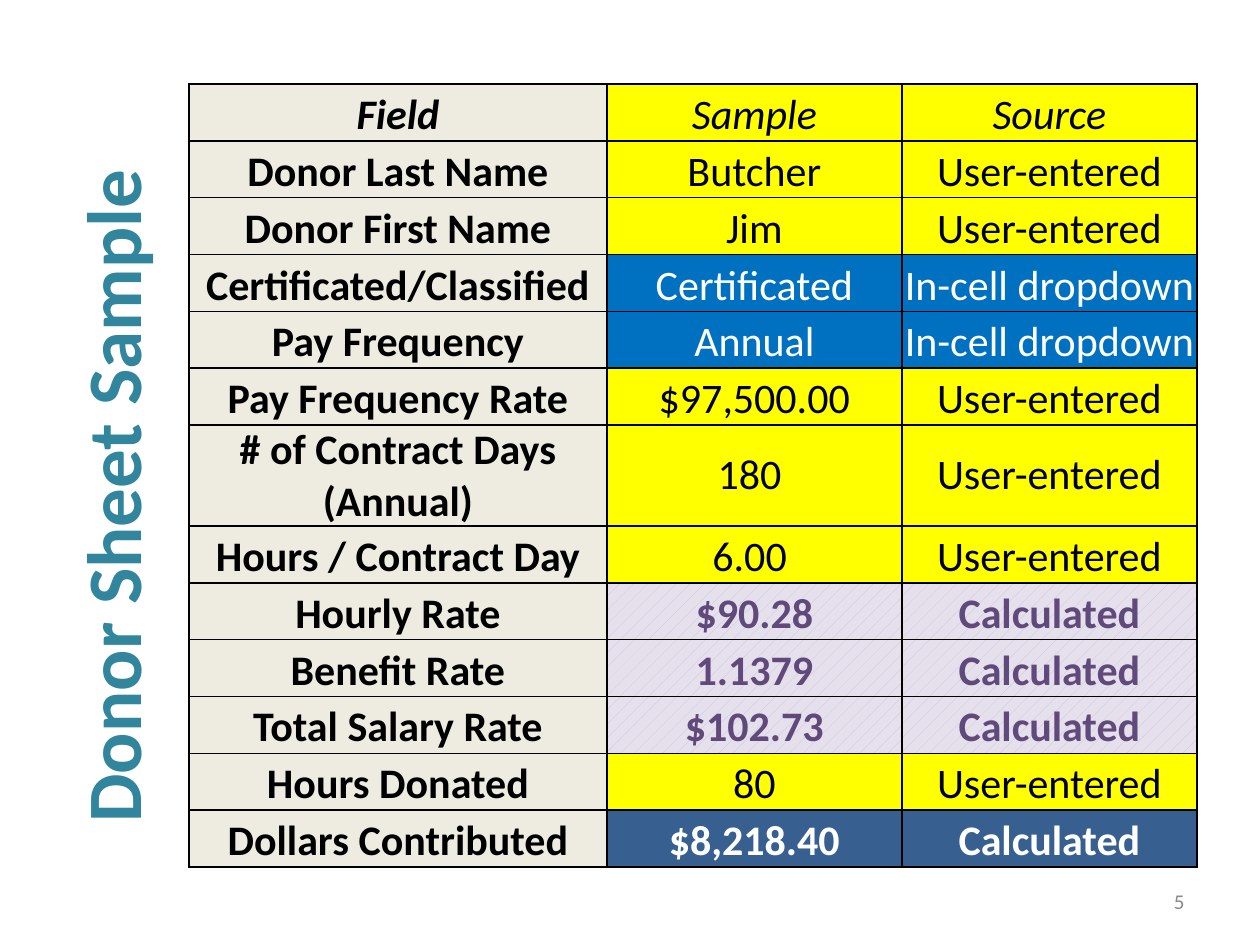
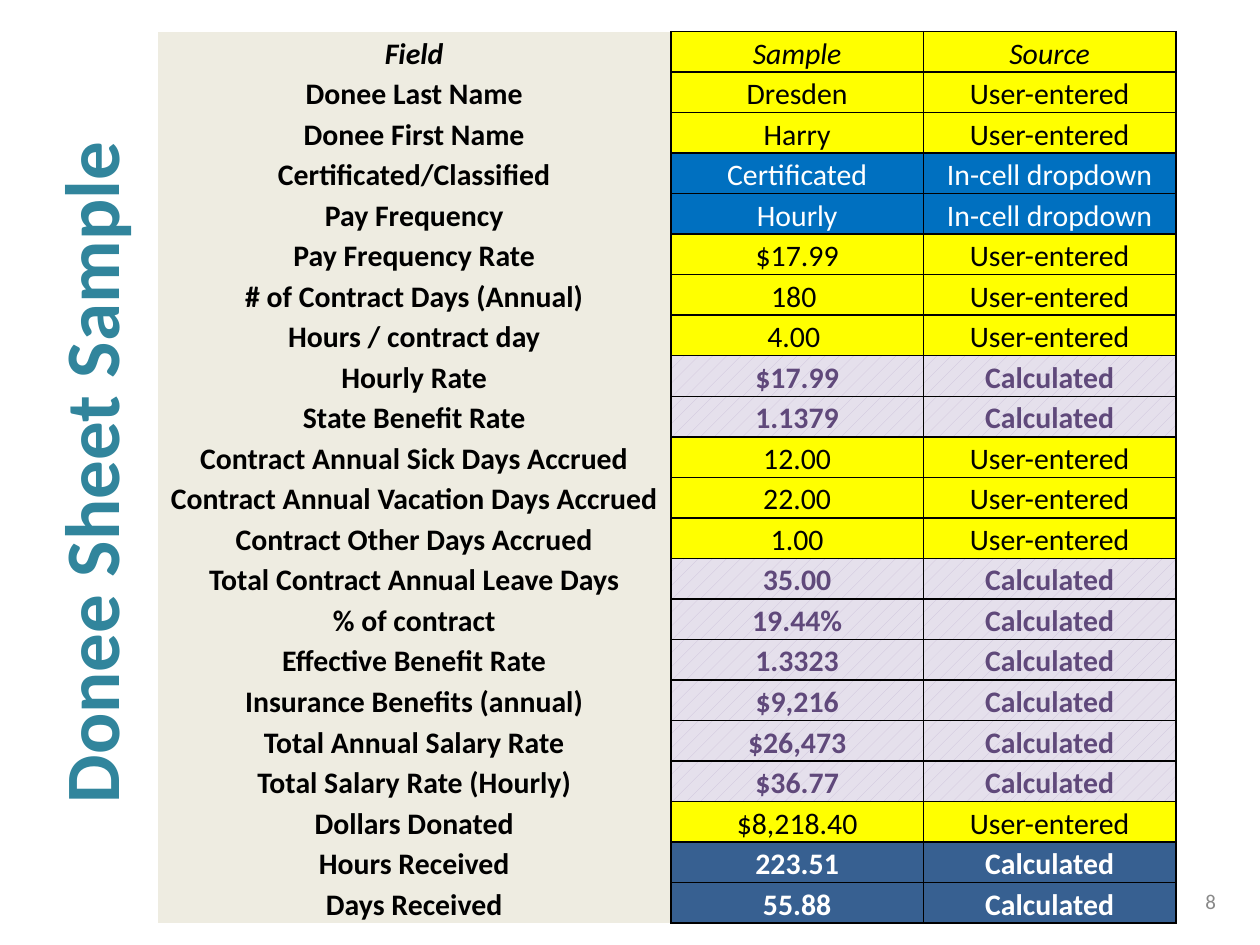
from dataclasses import dataclass

from lxml import etree
from pptx import Presentation
from pptx.dml.color import RGBColor
from pptx.enum.dml import MSO_PATTERN
from pptx.enum.text import MSO_ANCHOR, PP_ALIGN
from pptx.oxml.ns import qn
from pptx.util import Inches, Pt

CENTER, RIGHT = PP_ALIGN.CENTER, PP_ALIGN.RIGHT
MIDDLE, BOTTOM = MSO_ANCHOR.MIDDLE, MSO_ANCHOR.BOTTOM
DOTTED = MSO_PATTERN.PERCENT_10
BORDER_TAGS = ("a:lnL", "a:lnR", "a:lnT", "a:lnB")
ALL_SIDES = frozenset(BORDER_TAGS)
RIGHT_SIDE = frozenset(["a:lnR"])


@dataclass(frozen=True)
class Theme:
    """Fonts, sizes, colours and the grid cell shared by the slides."""

    font: str = "Calibri"
    title_size: float = 44
    number_size: float = 12
    border_width: float = 1
    title: str = "31859C"
    number: str = "898989"
    ink: str = "000000"
    white: str = "FFFFFF"
    field: str = "EEECE1"
    entered: str = "FFFF00"
    dropdown: str = "0070C0"
    calculated_ink: str = "60497B"
    calculated_dots: str = "CCC0DA"
    calculated: str = "E5E0EC"
    result: str = "376091"
    columns: int = 120
    rows: int = 90


THEME = Theme()


@dataclass(frozen=True)
class Box:
    """A region measured in grid columns and rows."""

    left: float
    top: float
    width: float
    height: float

    def turned(self):
        """Return the frame that covers this box after a quarter turn."""
        shift = (self.width - self.height) / 2
        return Box(self.left + shift, self.top - shift, self.height, self.width)

    def lengths(self):
        """Return left, top, width and height as slide lengths."""
        return (across(self.left), down(self.top), across(self.width), down(self.height))


@dataclass(frozen=True)
class Kind:
    """How a row's value is obtained, and how its cells look."""

    source: str
    fill: str
    color: str
    bold: bool = False
    italic: bool = False
    dots: str = ""


HEADING = Kind("Source", THEME.entered, THEME.ink, italic=True)
ENTERED = Kind("User-entered", THEME.entered, THEME.ink)
DROPDOWN = Kind("In-cell dropdown", THEME.dropdown, THEME.white)
CALCULATED = Kind("Calculated", THEME.calculated, THEME.calculated_ink, True,
                  dots=THEME.calculated_dots)
RESULT = Kind("Calculated", THEME.result, THEME.white, True)


@dataclass(frozen=True)
class Sheet:
    """The content and measures of one sample sheet slide."""

    title: str
    number: str
    title_box: Box
    table_box: Box
    number_box: Box
    field_columns: float
    text_size: float
    field_borders: frozenset
    records: tuple
    tall_record: str = ""
    tall_rows: float = 0


DONOR = Sheet(
    "Donor Sheet Sample", "5",
    Box(3, 6.25, 15, 82), Box(18, 8, 96, 74.5), Box(86, 83.4, 28, 4.8),
    39.8, 24, ALL_SIDES,
    (
        ("Field", "Sample", HEADING),
        ("Donor Last Name", "Butcher", ENTERED),
        ("Donor First Name", "Jim", ENTERED),
        ("Certificated/Classified", "Certificated", DROPDOWN),
        ("Pay Frequency", "Annual", DROPDOWN),
        ("Pay Frequency Rate", "$97,500.00", ENTERED),
        ("# of Contract Days (Annual)", "180 ", ENTERED),
        ("Hours / Contract Day", "6.00 ", ENTERED),
        ("Hourly Rate", "$90.28", CALCULATED),
        ("Benefit Rate", "1.1379", CALCULATED),
        ("Total Salary Rate", "$102.73", CALCULATED),
        ("Hours Donated", "80", ENTERED),
        ("Dollars Contributed", "$8,218.40", RESULT),
    ),
    "# of Contract Days (Annual)", 9.5,
)

DONEE = Sheet(
    "Donee Sheet Sample", "8",
    Box(3, 9, 11, 72), Box(15, 3, 97, 85), Box(112, 83.4, 5, 4.8),
    48.9, 17, RIGHT_SIDE,
    (
        ("Field", "Sample", HEADING),
        ("Donee Last Name", "Dresden", ENTERED),
        ("Donee First Name", "Harry", ENTERED),
        ("Certificated/Classified", "Certificated", DROPDOWN),
        ("Pay Frequency", "Hourly", DROPDOWN),
        ("Pay Frequency Rate", "$17.99", ENTERED),
        ("# of Contract Days (Annual)", "180 ", ENTERED),
        ("Hours / contract day", "4.00 ", ENTERED),
        ("Hourly Rate", "$17.99", CALCULATED),
        ("State Benefit Rate", "1.1379", CALCULATED),
        ("Contract Annual Sick Days Accrued", "12.00", ENTERED),
        ("Contract Annual Vacation Days Accrued", "22.00", ENTERED),
        ("Contract Other Days Accrued", "1.00", ENTERED),
        ("Total Contract Annual Leave Days", "35.00", CALCULATED),
        ("% of contract", "19.44%", CALCULATED),
        ("Effective Benefit Rate", "1.3323", CALCULATED),
        ("Insurance Benefits (annual)", "$9,216", CALCULATED),
        ("Total Annual Salary Rate", "$26,473", CALCULATED),
        ("Total Salary Rate (Hourly)", "$36.77", CALCULATED),
        ("Dollars Donated", "$8,218.40", ENTERED),
        ("Hours Received", "223.51", RESULT),
        ("Days Received", "55.88", RESULT),
    ),
)

SLIDE_WIDTH, SLIDE_HEIGHT = Inches(10), Inches(7.5)


def across(columns):
    """Turn grid columns into a length."""
    return round(SLIDE_WIDTH * columns / THEME.columns)


def down(rows):
    """Turn grid rows into a length."""
    return round(SLIDE_HEIGHT * rows / THEME.rows)


def write_text(frame, text, *, size, color, bold=False, italic=False, align=CENTER):
    """Write one formatted paragraph into a text frame."""
    paragraph = frame.paragraphs[0]
    paragraph.alignment = align
    run = paragraph.add_run()
    run.text = text
    font = run.font
    font.name, font.size = THEME.font, Pt(size)
    font.bold, font.italic = bold, italic
    font.color.rgb = RGBColor.from_string(color)


def add_text_box(slide, box, text, rotation=0, **text_format):
    """Add a wrapped, vertically centred text box."""
    shape = slide.shapes.add_textbox(*box.lengths())
    shape.rotation = rotation
    shape.text_frame.word_wrap = True
    shape.text_frame.vertical_anchor = MIDDLE
    write_text(shape.text_frame, text, **text_format)


def add_side_title(slide, box, text):
    """Add the title that reads upwards along the left edge."""
    add_text_box(slide, box.turned(), text, rotation=270,
                 size=THEME.title_size, color=THEME.title, bold=True)


def add_slide_number(slide, box, text):
    """Add the slide number at the bottom right, clear of the table."""
    add_text_box(slide, box, text, size=THEME.number_size,
                 color=THEME.number, align=RIGHT)


def fill_cell(cell, color, dots=""):
    """Fill a cell with a colour, dotted when a dot colour is given."""
    if not dots:
        cell.fill.solid()
        cell.fill.fore_color.rgb = RGBColor.from_string(color)
        return
    cell.fill.patterned()
    cell.fill.pattern = DOTTED
    cell.fill.fore_color.rgb = RGBColor.from_string(dots)
    cell.fill.back_color.rgb = RGBColor.from_string(color)


def set_borders(cell, sides):
    """Draw the given sides of a cell and clear the others."""
    properties = cell._tc.get_or_add_tcPr()
    for position, tag in enumerate(BORDER_TAGS):
        line = etree.Element(qn(tag), w=str(Pt(THEME.border_width)))
        properties.insert(position, line)
        if tag in sides:
            paint = etree.SubElement(line, qn("a:solidFill"))
            etree.SubElement(paint, qn("a:srgbClr"), val=THEME.ink)
        else:
            etree.SubElement(line, qn("a:noFill"))


def format_cell(cell, text, *, fill, dots="", sides=ALL_SIDES, anchor=BOTTOM, **text_format):
    """Give a cell its text, fill, borders and zero margins."""
    cell.margin_left = cell.margin_right = cell.margin_top = cell.margin_bottom = 0
    cell.vertical_anchor = anchor
    write_text(cell.text_frame, text, **text_format)
    fill_cell(cell, fill, dots)
    set_borders(cell, sides)


def add_sheet_table(slide, box, sheet):
    """Add the table of fields, sample values and sources."""
    count = len(sheet.records)
    table = slide.shapes.add_table(count, 3, *box.lengths()).table
    table.first_row = table.horz_banding = False
    value_columns = (box.width - sheet.field_columns) / 2
    for column, width in zip(table.columns, (sheet.field_columns, value_columns, value_columns)):
        column.width = across(width)
    plain_count = count - 1 if sheet.tall_record else count
    plain_rows = (box.height - sheet.tall_rows) / plain_count
    for index, (field, sample, kind) in enumerate(sheet.records):
        is_tall = field == sheet.tall_record
        table.rows[index].height = down(sheet.tall_rows if is_tall else plain_rows)
        format_cell(table.cell(index, 0), field, fill=THEME.field, sides=sheet.field_borders,
                    size=sheet.text_size, color=THEME.ink, bold=True, italic=kind.italic)
        for column, text in enumerate((sample, kind.source), start=1):
            format_cell(table.cell(index, column), text, fill=kind.fill, dots=kind.dots,
                        anchor=MIDDLE if is_tall else BOTTOM, size=sheet.text_size,
                        color=kind.color, bold=kind.bold, italic=kind.italic)


def add_sheet_slide(presentation, sheet):
    """Add one sample sheet slide."""
    slide = presentation.slides.add_slide(presentation.slide_layouts[6])
    add_side_title(slide, sheet.title_box, sheet.title)
    add_sheet_table(slide, sheet.table_box, sheet)
    add_slide_number(slide, sheet.number_box, sheet.number)


def main():
    """Build and save the presentation."""
    presentation = Presentation()
    presentation.slide_width, presentation.slide_height = SLIDE_WIDTH, SLIDE_HEIGHT
    for sheet in (DONOR, DONEE):
        add_sheet_slide(presentation, sheet)
    presentation.save("out.pptx")


if __name__ == "__main__":
    main()
